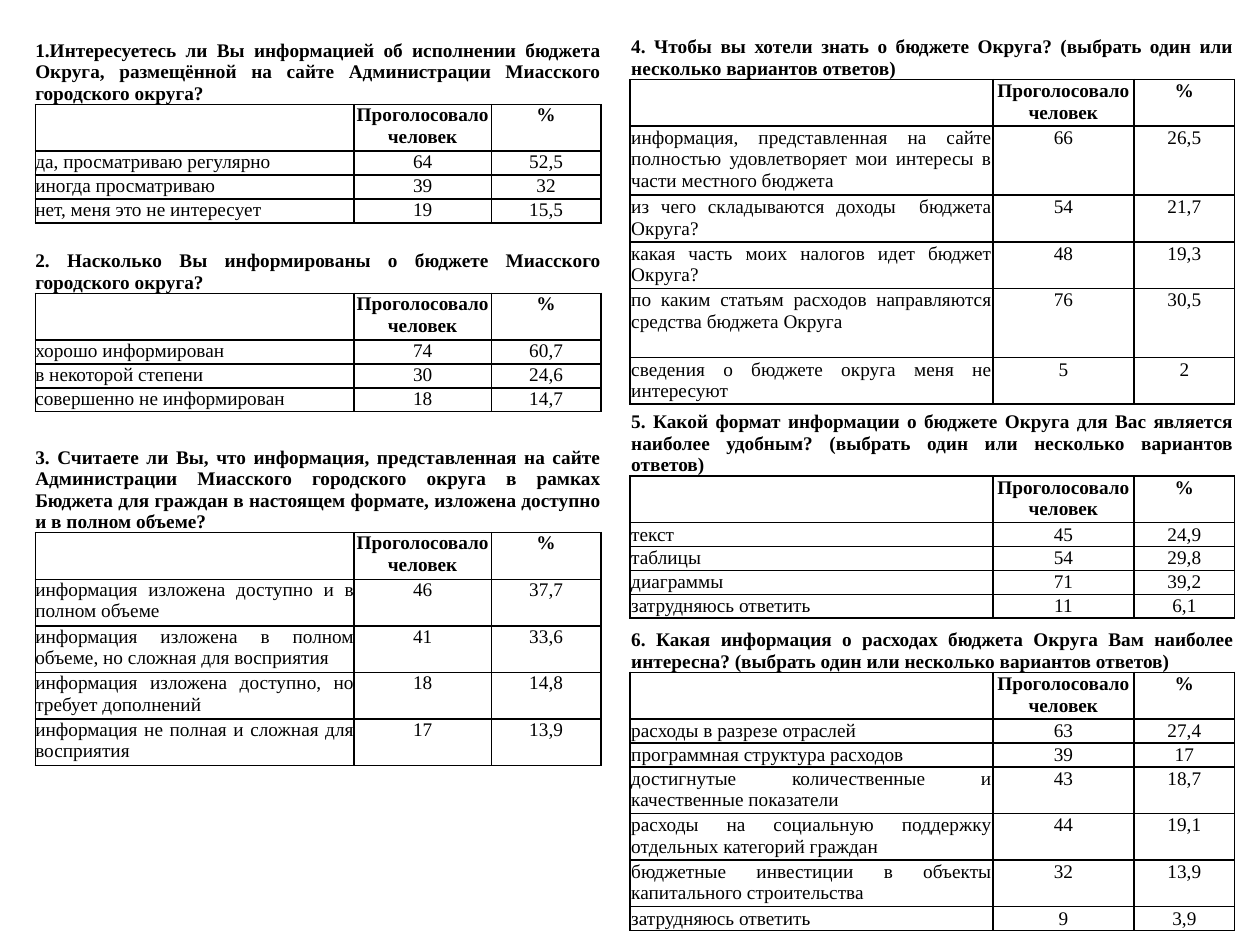
from lxml.etree import SubElement as Sub
from pptx import Presentation
from pptx.dml.color import RGBColor
from pptx.enum.text import MSO_ANCHOR as Anchor, PP_ALIGN as Align
from pptx.oxml.ns import qn
from pptx.util import Inches, Pt

BLACK = RGBColor(0, 0, 0)
FONT = {"name": "Times New Roman", "size": Pt(11)}
HEAD = ("", "Проголосовало человек", "%")
LINE = {1: 0.19, 2: 0.37, 3: 0.55}

LEFT = [
    ("1.Интересуетесь ли Вы информацией об исполнении бюджета Округа, размещённой на сайте "
     "Администрации Миасского городского округа?", 0.54, [
         ("да, просматриваю регулярно", "64", "52,5", 1),
         ("иногда просматриваю", "39", "32", 1),
         ("нет, меня это не интересует", "19", "15,5", 1)]),
    ("2. Насколько Вы информированы о бюджете Миасского городского округа?", 0.56, [
        ("хорошо информирован", "74", "60,7", 1),
        ("в некоторой степени", "30", "24,6", 1),
        ("совершенно не информирован", "18", "14,7", 1)]),
    ("3. Считаете ли Вы, что информация, представленная на сайте Администрации Миасского "
     "городского округа в рамках Бюджета для граждан в настоящем формате, изложена доступно "
     "и в полном объеме?", 0.96, [
         ("информация изложена доступно и в полном объеме", "46", "37,7", 2),
         ("информация изложена в полном объеме, но сложная для восприятия", "41", "33,6", 2),
         ("информация изложена доступно, но требует дополнений", "18", "14,8", 2),
         ("информация не полная и сложная для восприятия", "17", "13,9", 2)]),
]
RIGHT = [
    ("4. Чтобы вы хотели знать о бюджете Округа? (выбрать один или несколько вариантов "
     "ответов)", 0.42, [
         ("информация, представленная на сайте полностью удовлетворяет мои интересы в части "
          "местного бюджета", "66", "26,5", 3),
         ("из чего складываются доходы  бюджета Округа?", "54", "21,7", 2),
         ("какая часть моих налогов идет бюджет Округа?", "48", "19,3", 2),
         ("по каким статьям расходов направляются средства бюджета Округа", "76", "30,5", 3),
         ("сведения о бюджете округа меня не интересуют", "5", "2", 2)]),
    ("5. Какой формат информации о бюджете Округа для Вас является наиболее удобным? "
     "(выбрать один или несколько вариантов ответов)", 0.57, [
         ("текст", "45", "24,9", 1),
         ("таблицы", "54", "29,8", 1),
         ("диаграммы", "71", "39,2", 1),
         ("затрудняюсь ответить", "11", "6,1", 1)]),
    ("6. Какая информация о расходах бюджета Округа Вам наиболее интересна? (выбрать один "
     "или несколько вариантов ответов)", 0.43, [
         ("расходы в разрезе отраслей", "63", "27,4", 1),
         ("программная структура расходов", "39", "17", 1),
         ("достигнутые количественные и качественные показатели", "43", "18,7", 2),
         ("расходы на социальную поддержку отдельных категорий граждан", "44", "19,1", 2),
         ("бюджетные инвестиции в объекты капитального строительства", "32", "13,9", 2),
         ("затрудняюсь ответить", "9", "3,9", 1)]),
]
POLLS = [
    {"at": (0.28, 0.29), "cols": (2.53, 1.09, 0.87), "pad": 0, "rule": 1, "asks": LEFT},
    {"at": (5, 0.21), "cols": (2.88, 1.12, 0.8), "pad": 0.01, "rule": 0.5, "asks": RIGHT},
]


def edge(cell, widths):
    props = cell._tc.get_or_add_tcPr()
    for spot, side in enumerate("LRTB"):
        width = widths.get(side, 0)
        line = Sub(props, qn(f"a:ln{side}"), w=str(int(Pt(width))))
        props.insert(spot, line)
        if width:
            fill = Sub(line, qn("a:solidFill"))
            Sub(fill, qn("a:srgbClr"), val=str(BLACK))
        else:
            Sub(line, qn("a:noFill"))


def write(cell, text, align, bold):
    para = cell.text_frame.paragraphs[0]
    para.alignment = align
    if text:
        run = para.add_run()
        run.text = text
        for key, val in {**FONT, "bold": bold}.items():
            setattr(run.font, key, val)
        run.font.color.rgb = BLACK


def lay(asks):
    rows = []
    for title, high, votes in asks:
        rows.append(("title", (title, "", ""), high))
        rows.append(("head", HEAD, LINE[2]))
        rows += [("vote", vote[:3], LINE[vote[3]]) for vote in votes]
    return rows


def draw(slide, poll):
    rows = lay(poll["asks"])
    size = sum(poll["cols"]), sum(row[2] for row in rows)
    box = map(Inches, (*poll["at"], *size))
    table = slide.shapes.add_table(len(rows), 3, *box).table
    table.first_row = table.horz_banding = False
    for col, width in zip(table.columns, poll["cols"]):
        col.width = Inches(width)
    pad = Inches(poll["pad"])
    form = {"margin_left": pad, "margin_right": pad, "margin_top": pad, "margin_bottom": 0}
    for num, (kind, texts, high) in enumerate(rows):
        table.rows[num].height = Inches(high)
        title = kind == "title"
        rule = poll["rule"] if num < 2 else 1
        if title:
            lines = {"T": 1 if num else 0, "B": rule}
        else:
            lines = {"L": 1, "R": 1, "T": rule, "B": 1}
        for pos, text in enumerate(texts):
            cell = table.cell(num, pos)
            for key, val in form.items():
                setattr(cell, key, val)
            cell.vertical_anchor = Anchor.BOTTOM if title else Anchor.TOP
            cell.fill.background()
            edge(cell, lines)
            write(cell, text, Align.CENTER if pos else Align.JUSTIFY, kind != "vote")
        if title:
            table.cell(num, 0).merge(table.cell(num, 2))


def main():
    deck = Presentation()
    deck.slide_width, deck.slide_height = Inches(10), Inches(7.5)
    slide = deck.slides.add_slide(deck.slide_layouts[6])
    for poll in POLLS:
        draw(slide, poll)
    deck.save("out.pptx")


if __name__ == "__main__":
    main()
